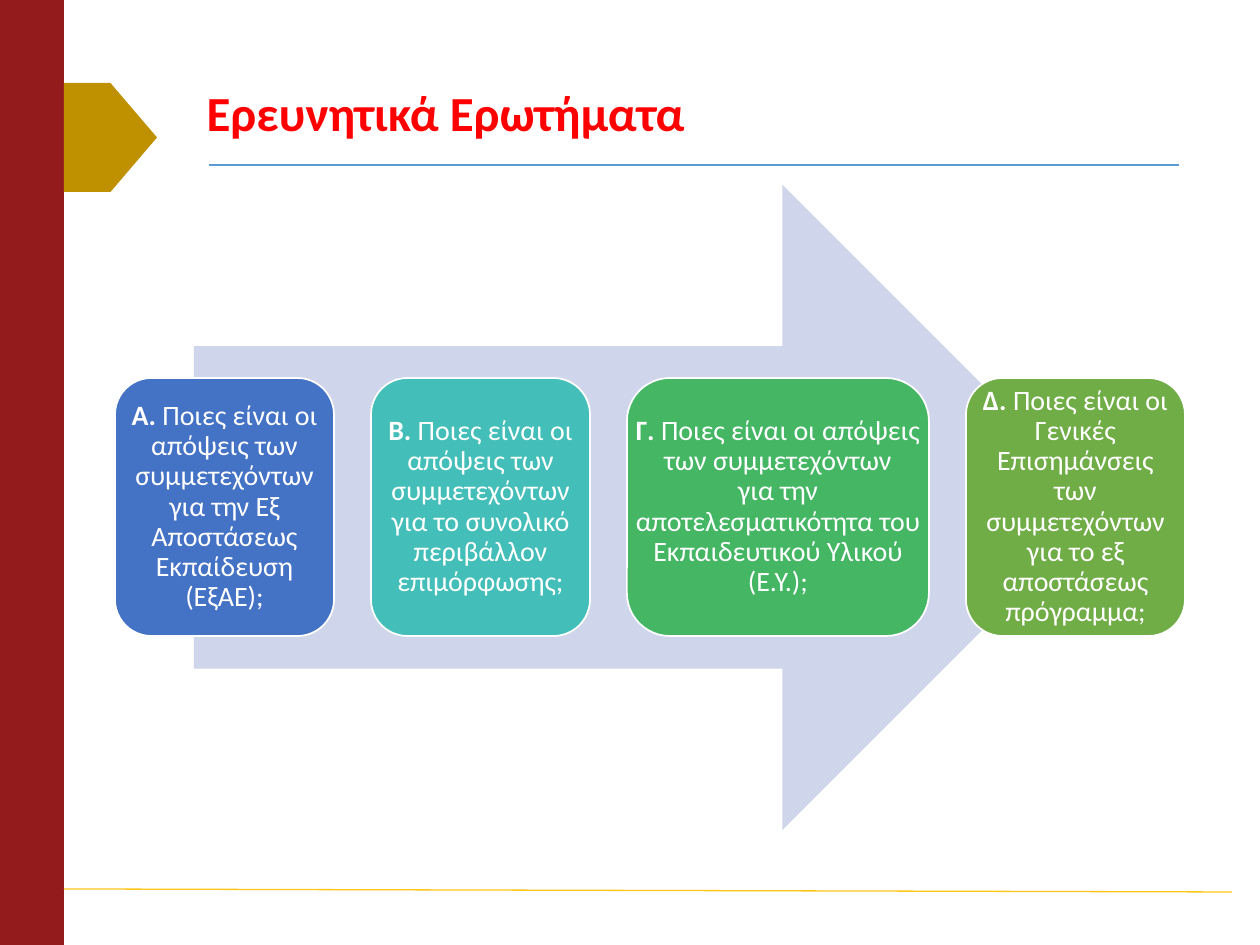
from lxml.etree import SubElement
from pptx import Presentation
from pptx.dml.color import RGBColor
from pptx.enum.shapes import MSO_CONNECTOR, MSO_SHAPE
from pptx.enum.text import MSO_ANCHOR, PP_ALIGN
from pptx.oxml.ns import qn
from pptx.util import Pt

PX = 914400 // 126  # EMU per px
COLORS = {
    "band": "931B1B", "tab": "BF9000", "rule": "5B9BD5", "footer": "FFC61A",
    "title": "FF0000", "arrow": "CFD5EA", "white": "FFFFFF",
    "blue": "4472C4", "teal": "43BEB9", "green": "45B664", "olive": "70AD47",
}


def rgb(name):
    return RGBColor.from_string(COLORS[name])


class SlideBuilder:
    font = "Calibri"

    def __init__(self, s):
        self.s = s

    def run(self, p, text, size, color, bold=False):
        r = p.add_run()
        r.text = text
        r.font.name, r.font.size, r.font.bold = self.font, Pt(size), bold
        r.font.color.rgb = rgb(color)

    def title(self, x, y, w, h, text):
        sp = self.s.shapes.title
        sp.left, sp.top, sp.width, sp.height = (v * PX for v in (x, y, w, h))
        tf = sp.text_frame
        tf.word_wrap = True
        tf.vertical_anchor = MSO_ANCHOR.MIDDLE
        p = tf.paragraphs[0]
        p.alignment, p.line_spacing = PP_ALIGN.LEFT, 0.9
        self.run(p, text, 28, "title", True)

    def shape(self, kind, x, y, w, h, fill, line=None):
        sp = self.s.shapes.add_shape(kind, x * PX, y * PX, w * PX, h * PX)
        sp.shadow.inherit = False
        sp.fill.solid()
        sp.fill.fore_color.rgb = rgb(fill)
        if line:
            sp.line.color.rgb = rgb(line)
            sp.line.width = Pt(1)
        else:
            sp.line.fill.background()

    def line(self, x1, y1, x2, y2, color):
        c = self.s.shapes.add_connector(
            MSO_CONNECTOR.STRAIGHT, x1 * PX, y1 * PX, x2 * PX, y2 * PX)
        c.line.color.rgb = rgb(color)
        c.line.width = Pt(0.75)
        SubElement(c._element.spPr, qn("a:effectLst"))

    def card(self, x, y, w, h, fill, label, lines):
        self.shape(MSO_SHAPE.ROUNDED_RECTANGLE, x, y, w, h, fill, "white")
        # A text box lets the words use the full width between rounded corners
        tf = self.s.shapes.add_textbox(x * PX, y * PX, w * PX, h * PX).text_frame
        tf.word_wrap = True
        tf.vertical_anchor = MSO_ANCHOR.MIDDLE
        tf.margin_left = tf.margin_right = tf.margin_top = tf.margin_bottom = 8 * PX
        p = tf.paragraphs[0]
        p.alignment, p.line_spacing = PP_ALIGN.CENTER, 0.9
        self.run(p, label + " ", 16, "white", True)
        for i, text in enumerate(lines):
            if i:
                p.add_line_break()
            self.run(p, text, 16, "white")


def main():
    prs = Presentation()
    prs.slide_width, prs.slide_height = 9144000, 6858000
    b = SlideBuilder(prs.slides.add_slide(prs.slide_layouts[5]))

    # Frame: side band, tab and rules
    b.shape(MSO_SHAPE.RECTANGLE, 0, 0, 64, 945, "band")
    b.line(209, 165, 1179, 165, "rule")
    b.line(64, 889, 1232, 892, "footer")
    b.shape(MSO_SHAPE.PENTAGON, 64, 83, 93, 109, "tab")

    b.title(194, 66, 1020, 99, "Ερευνητικά Ερωτήματα")

    # Research questions along the arrow
    b.shape(MSO_SHAPE.RIGHT_ARROW, 194, 185, 911, 645, "arrow")
    questions = [
        (219, "blue", "Α.", ["Ποιες είναι οι απόψεις των συμμετεχόντων για την "
                             "Εξ Αποστάσεως Εκπαίδευση (ΕξΑΕ);"]),
        (219, "teal", "Β.", ["Ποιες είναι οι απόψεις των συμμετεχόντων για το "
                             "συνολικό περιβάλλον επιμόρφωσης;"]),
        (302, "green", "Γ.", ["Ποιες είναι οι απόψεις των συμμετεχόντων",
                              "για την αποτελεσματικότητα του "
                              "Εκπαιδευτικού Υλικού (Ε.Υ.);"]),
        (219, "olive", "Δ.", ["Ποιες είναι οι Γενικές Επισημάνσεις των "
                              "συμμετεχόντων για το εξ αποστάσεως πρόγραμμα;"]),
    ]
    x, gap = 115, 37
    for w, fill, label, lines in questions:
        b.card(x, 378, w, 258, fill, label, lines)
        x += w + gap

    prs.save("out.pptx")


if __name__ == "__main__":
    main()
